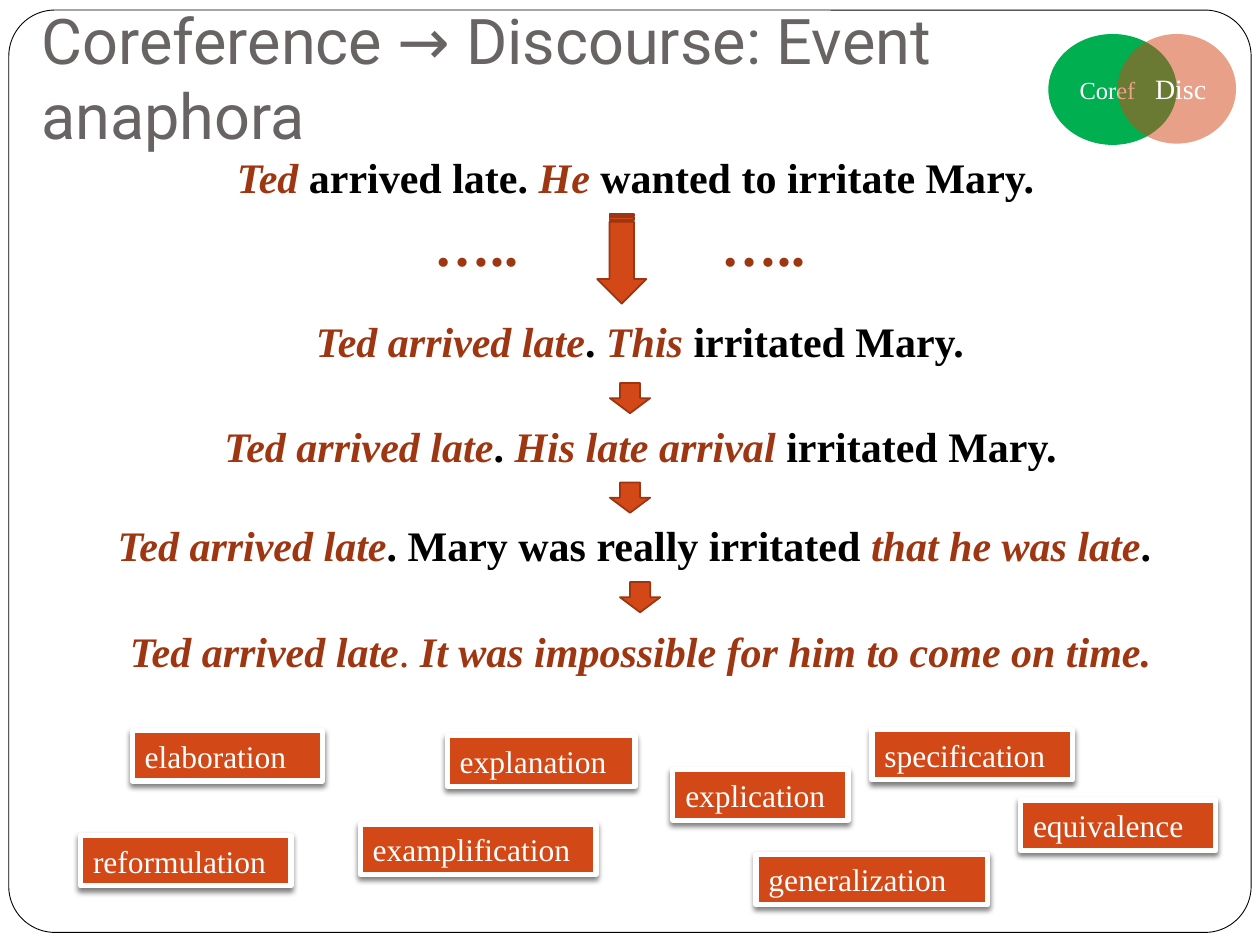
from lxml import etree
from pptx import Presentation
from pptx.dml.color import RGBColor
from pptx.enum.shapes import MSO_SHAPE
from pptx.enum.text import MSO_ANCHOR, PP_ALIGN
from pptx.oxml.ns import qn
from pptx.util import Inches, Pt

RECTANGLE, ROUNDED = MSO_SHAPE.RECTANGLE, MSO_SHAPE.ROUNDED_RECTANGLE
OVAL, DOWN_ARROW = MSO_SHAPE.OVAL, MSO_SHAPE.DOWN_ARROW
STRIPED_ARROW = MSO_SHAPE.STRIPED_RIGHT_ARROW
TOP, MIDDLE, BOTTOM = MSO_ANCHOR.TOP, MSO_ANCHOR.MIDDLE, MSO_ANCHOR.BOTTOM
LEFT, CENTER, RIGHT = PP_ALIGN.LEFT, PP_ALIGN.CENTER, PP_ALIGN.RIGHT

WHITE, BLACK, GREY = "FFFFFF", "000000", "696464"
ORANGE, RUST, RUST_LINE, GREEN = "D34817", "9E3611", "9C3511", "00B050"
SERIF = "Times New Roman"

SENTENCES = [
    ((0.91, 1.07, 8.27, 0.67),
     [("Ted ", True), ("arrived late. ", False), ("He", True),
      (" wanted to irritate Mary.", False)]),
    ((1.46, 2.37, 7.24, 0.67),
     [("Ted arrived late", True), (". ", False), ("This ", True),
      ("irritated Mary.", False)]),
    ((0.95, 3.2, 8.27, 0.67),
     [("Ted arrived late", True), (". ", False), ("His late arrival ", True),
      ("irritated Mary.", False)]),
    ((0.35, 3.99, 9.37, 0.67),
     [("Ted arrived late", True), (". Mary was really irritated ", False),
      ("that he was late", True), (".", False)]),
]
RELATIONS = [
    ("elaboration", 1.05, 5.8, 1.51),
    ("reformulation", 0.64, 6.63, 1.67),
    ("explanation", 3.55, 5.84, 1.49),
    ("explication", 5.34, 6.11, 1.39),
    ("specification", 6.92, 5.79, 1.59),
    ("equivalence", 8.1, 6.35, 1.55),
    ("examplification", 2.86, 6.54, 1.87),
    ("generalization", 6, 6.78, 1.84),
]


def paint(color_format, color):
    color_format.rgb = RGBColor.from_string(color)


def add_box(page, kind, place, fill, line=None, weight=1):
    box = page.shapes.add_shape(kind, *map(Inches, place))
    box.shadow.inherit = False
    box.fill.solid()
    paint(box.fill.fore_color, fill)
    if line:
        paint(box.line.color, line)
        box.line.width = Pt(weight)
    else:
        box.line.fill.background()
    return box


def set_frame(box, anchor, align):
    frame = box.text_frame
    frame.word_wrap = True
    frame.vertical_anchor = anchor
    para = frame.paragraphs[0]
    para.alignment = align
    return para


def add_span(para, text, size, color, font=SERIF, bold=False, italic=False):
    span = para.add_run()
    span.text = text
    span.font.name = font
    span.font.size = Pt(size)
    span.font.bold = bold
    span.font.italic = italic
    paint(span.font.color, color)


def add_text(page, place, text, size, color, anchor=TOP, **style):
    box = page.shapes.add_textbox(*map(Inches, place))
    add_span(set_frame(box, anchor, LEFT), text, size, color, **style)
    return box


def add_sentence(page, place):
    box = add_box(page, RECTANGLE, place, WHITE, WHITE)
    para = set_frame(box, MIDDLE, CENTER)
    para.space_before = Pt(5.8)
    return para


def add_drop_shadow(box):
    effects = box._element.spPr.find(qn("a:effectLst"))
    shadow = etree.SubElement(
        effects, qn("a:outerShdw"), blurRad=str(Pt(3)), dist=str(Pt(2)),
        dir="5400000", rotWithShape="0")
    color = etree.SubElement(shadow, qn("a:srgbClr"), val=BLACK)
    etree.SubElement(color, qn("a:alpha"), val="50000")


def add_relation(page, text, left, top, width):
    box = add_box(page, RECTANGLE, (left, top, width, 0.4), ORANGE, WHITE, 3)
    add_drop_shadow(box)
    add_span(set_frame(box, TOP, LEFT), text, 18, WHITE)


def add_circle(page, place, fill, text, size, align):
    circle = add_box(page, OVAL, place, fill)
    add_span(set_frame(circle, MIDDLE, align), text, size, WHITE)
    return circle


def set_opacity(box, percent):
    color = box._element.spPr.find(qn("a:solidFill"))[0]
    etree.SubElement(color, qn("a:alpha"), val=str(percent * 1000))


def main():
    deck = Presentation()
    deck.slide_width, deck.slide_height = Inches(10), Inches(7.5)
    page = deck.slides.add_slide(deck.slide_layouts[6])

    border = add_box(page, ROUNDED, (0.07, 0.08, 9.86, 7.32), WHITE, BLACK, 0.5)
    border.adjustments[0] = 0.05

    for place, parts in SENTENCES:
        para = add_sentence(page, place)
        for text, marked in parts:
            add_span(para, text, 24, RUST if marked else BLACK,
                     bold=True, italic=marked)
    para = add_sentence(page, (0.6, 4.85, 8.97, 0.63))
    for text, strong in [("Ted arrived late", True), (". ", False),
                         ("It was impossible for him to come on time.", True)]:
        add_span(para, text, 24, RUST, bold=strong, italic=strong)

    striped = add_box(page, STRIPED_ARROW, (4.58, 1.86, 0.71, 0.39),
                      ORANGE, RUST_LINE)
    striped.rotation = 90
    for left in (3.35, 5.63):
        add_text(page, (left, 1.62, 0.9, 0.64), "…..", 32, RUST, bold=True)
    for row, left in enumerate((4.84, 4.84, 4.92)):
        add_box(page, DOWN_ARROW, (left, 3.04 + 0.79 * row, 0.32, 0.24),
                ORANGE, RUST_LINE)

    for relation in RELATIONS:
        add_relation(page, *relation)

    add_circle(page, (8.32, 0.27, 1.02, 0.88), GREEN, "Coref", 14, LEFT)
    discourse = add_circle(page, (8.87, 0.27, 0.94, 0.87), ORANGE,
                           "Disc", 16, RIGHT)
    set_opacity(discourse, 51)

    title = add_text(page, (0.23, 0.44, 7.81, 0.87),
                     "Coreference → Discourse: Event anaphora", 36, GREY,
                     anchor=BOTTOM, font="Roboto")
    title.text_frame.margin_bottom = Inches(0.1)

    deck.save("out.pptx")


if __name__ == "__main__":
    main()
